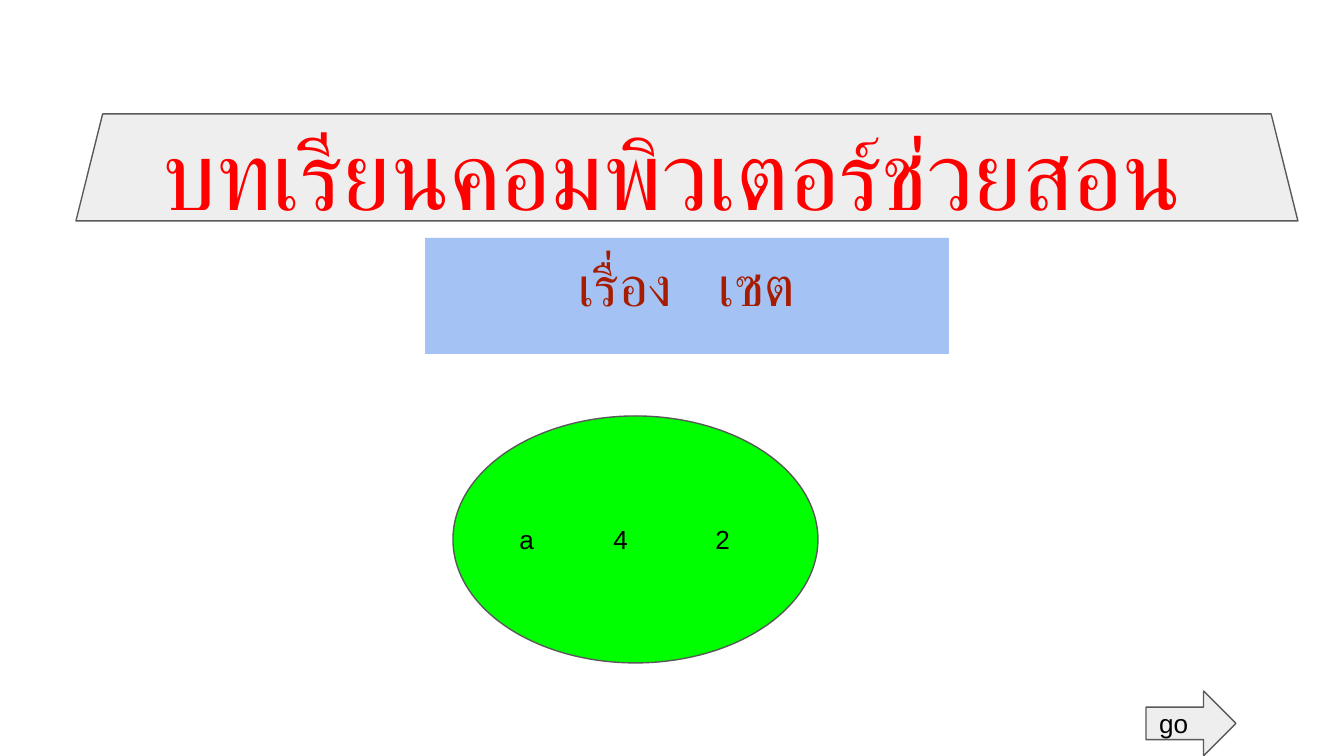
from dataclasses import dataclass

from lxml.etree import SubElement
from pptx import Presentation
from pptx.dml.color import RGBColor
from pptx.enum.shapes import MSO_SHAPE
from pptx.enum.text import MSO_ANCHOR, PP_ALIGN
from pptx.oxml.ns import qn
from pptx.util import Pt

SCALE = 914400 / 134.4


@dataclass(frozen=True)
class Theme:
    font: str = "Arial"
    gray: str = "EEEEEE"
    edge: str = "595959"
    blue: str = "A4C2F4"
    green: str = "00FF00"
    red: str = "FF0000"
    rust: str = "A61C00"
    black: str = "000000"
    title: int = 52
    topic: int = 30
    label: int = 14


THEME = Theme()


def px(num):
    return round(num * SCALE)


def add_form(slide, kind, box, fill, edge=None):
    form = slide.shapes.add_shape(kind, *map(px, box))
    form.shadow.inherit = False
    form.fill.solid()
    form.fill.fore_color.rgb = RGBColor.from_string(fill)
    if edge:
        form.line.color.rgb = RGBColor.from_string(edge)
        form.line.width = Pt(0.75)
    else:
        form.line.fill.background()
    return form


def add_text(shape, runs, size, color, align, anchor):
    """Fill a shape with one paragraph of (text, extra spacing in points) runs."""
    frame = shape.text_frame
    frame.word_wrap = True
    frame.vertical_anchor = anchor
    frame.margin_left = frame.margin_right = px(13)
    frame.margin_top = frame.margin_bottom = px(13)
    para = frame.paragraphs[0]
    para.alignment = align
    for text, gap in runs:
        run = para.add_run()
        run.text = text
        font = run.font
        font.size = Pt(size)
        font.color.rgb = RGBColor.from_string(color)
        font.name = THEME.font
        props = run._r.get_or_add_rPr()
        for tag in ("a:ea", "a:cs"):
            SubElement(props, qn(tag)).set("typeface", THEME.font)
        if gap:
            props.set("spc", str(gap * 100))
    return para


def add_tabs(para, stops):
    tabs = SubElement(para._p.get_or_add_pPr(), qn("a:tabLst"))
    for stop in stops:
        tab = SubElement(tabs, qn("a:tab"))
        tab.set("pos", str(px(stop)))
        tab.set("algn", "l")


def add_title(slide, box):
    left, top, wide, high = box
    form = add_form(slide, MSO_SHAPE.TRAPEZOID, box, THEME.gray, THEME.edge)
    form.adjustments[0] = 0.25
    area = (left - 30, top - 23, wide + 30, high + 45)
    text = slide.shapes.add_textbox(*map(px, area))
    add_text(text, [("บทเรียนคอมพิวเตอร์ช่วยสอน", 0)], THEME.title, THEME.red,
             PP_ALIGN.CENTER, MSO_ANCHOR.BOTTOM)


def add_topic(slide, box):
    form = add_form(slide, MSO_SHAPE.RECTANGLE, box, THEME.blue)
    add_text(form, [("เรื่อง", 0), (" ", 17), ("เซต", 0)], THEME.topic, THEME.rust,
             PP_ALIGN.CENTER, MSO_ANCHOR.TOP)


def add_next(slide, box):
    form = add_form(slide, MSO_SHAPE.RIGHT_ARROW, box, THEME.gray, THEME.edge)
    add_text(form, [("go", 0)], THEME.label, THEME.black,
             PP_ALIGN.LEFT, MSO_ANCHOR.MIDDLE)


def add_set(slide, box):
    form = add_form(slide, MSO_SHAPE.OVAL, box, THEME.green, THEME.edge)
    para = add_text(form, [("a\t4\t2", 0)], THEME.label, THEME.black,
                    PP_ALIGN.LEFT, MSO_ANCHOR.MIDDLE)
    add_tabs(para, (94, 196))


def main():
    deck = Presentation()
    deck.slide_width, deck.slide_height = px(1344), px(756)
    slide = deck.slides.add_slide(deck.slide_layouts[6])
    add_title(slide, (76, 114, 1222, 107))
    add_topic(slide, (425, 238, 524, 116))
    add_next(slide, (1146, 691, 90, 65))
    add_set(slide, (453, 416, 365, 247))
    deck.save("out.pptx")


if __name__ == "__main__":
    main()
